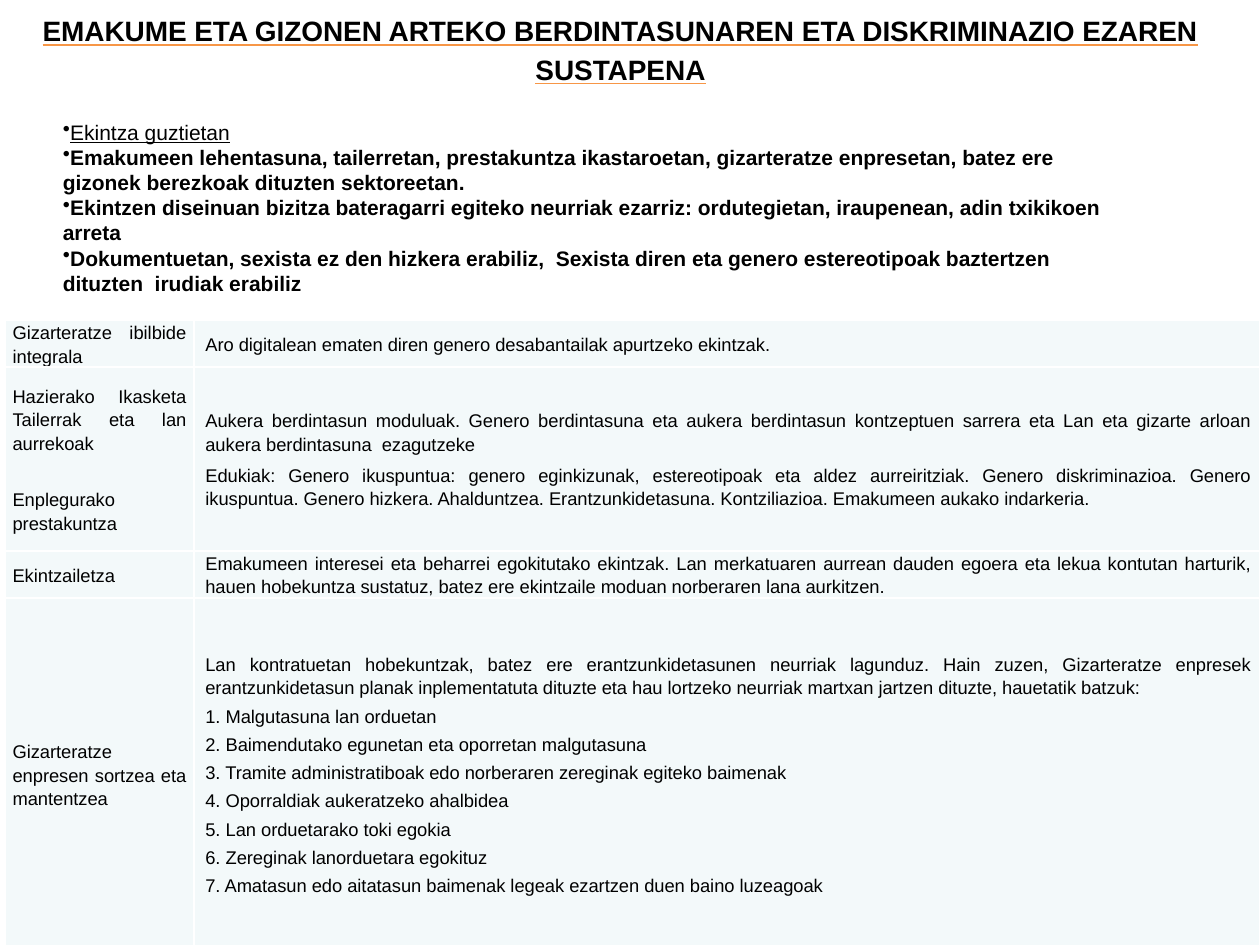
"""Build a slide on promoting equality between women and men."""
import pptx
import pptx.util
import pptx.dml.color
import pptx.enum.shapes
import pptx.enum.text
import pptx.oxml
import pptx.oxml.ns
from dataclasses import dataclass

Inches, Pt = pptx.util.Inches, pptx.util.Pt
RGB = pptx.dml.color.RGBColor.from_string
ALIGN = pptx.enum.text.PP_ALIGN
ANCHOR = pptx.enum.text.MSO_ANCHOR
AUTO = pptx.enum.text.MSO_AUTO_SIZE


@dataclass(frozen=True)
class Theme:
    font: str = "Arial"
    ink: str = "000000"
    paper: str = "FFFFFF"
    cell: str = "F3F9FA"
    accent: str = "F79646"
    title: float = 16
    body: float = 12
    table: float = 10.5
    spacing: float = 1.15


THEME = Theme()

TITLE = "EMAKUME ETA GIZONEN ARTEKO BERDINTASUNAREN ETA DISKRIMINAZIO EZAREN SUSTAPENA"
LEAD = "Ekintza guztietan"
MEASURES = [
    "Emakumeen lehentasuna, tailerretan, prestakuntza ikastaroetan, gizarteratze enpresetan, "
    "batez ere gizonek berezkoak dituzten sektoreetan.",
    "Ekintzen diseinuan bizitza bateragarri egiteko neurriak ezarriz: ordutegietan, iraupenean, "
    "adin txikikoen arreta",
    "Dokumentuetan, sexista ez den hizkera erabiliz,  Sexista diren eta genero estereotipoak "
    "baztertzen dituzten  irudiak erabiliz",
]

LABEL = dict(align=ALIGN.JUSTIFY, after=3)
ROWS = [
    dict(height=0.37,
         labels=["Gizarteratze ibilbide integrala"],
         details=["Aro digitalean ematen diren genero desabantailak apurtzeko ekintzak."],
         style=dict(indent=0.03)),
    dict(height=1.46,
         labels=["Hazierako Ikasketa Tailerrak eta lan aurrekoak", "Enplegurako prestakuntza"],
         details=[
             "Aukera berdintasun moduluak. Genero berdintasuna eta aukera berdintasun kontzeptuen "
             "sarrera eta Lan eta gizarte arloan aukera berdintasuna  ezagutzeke",
             "Edukiak: Genero ikuspuntua: genero eginkizunak, estereotipoak eta aldez aurreiritziak. "
             "Genero diskriminazioa. Genero ikuspuntua. Genero hizkera. Ahalduntzea. "
             "Erantzunkidetasuna. Kontziliazioa. Emakumeen aukako indarkeria."],
         style=dict(align=ALIGN.JUSTIFY, indent=0.03, before=1.4, after=2.9)),
    dict(height=0.37,
         labels=["Ekintzailetza"],
         details=[
             "Emakumeen interesei eta beharrei egokitutako ekintzak. Lan merkatuaren aurrean dauden "
             "egoera eta lekua kontutan harturik, hauen hobekuntza sustatuz, batez ere ekintzaile "
             "moduan norberaren lana aurkitzen."],
         style=dict(align=ALIGN.JUSTIFY, indent=0.03, after=3)),
    dict(height=2.8,
         labels=["Gizarteratze enpresen sortzea eta mantentzea"],
         details=[
             "Lan kontratuetan hobekuntzak, batez ere erantzunkidetasunen neurriak lagunduz. Hain "
             "zuzen, Gizarteratze enpresek erantzunkidetasun planak inplementatuta dituzte eta hau "
             "lortzeko neurriak martxan jartzen dituzte, hauetatik batzuk:",
             "1. Malgutasuna lan orduetan",
             "2. Baimendutako egunetan eta oporretan malgutasuna",
             "3. Tramite administratiboak edo norberaren zereginak egiteko baimenak",
             "4. Oporraldiak aukeratzeko ahalbidea",
             "5. Lan orduetarako toki egokia",
             "6. Zereginak lanorduetara egokituz",
             "7. Amatasun edo aitatasun baimenak legeak ezartzen duen baino luzeagoak"],
         style=dict(align=ALIGN.JUSTIFY, indent=0.03, before=1.4, after=1.4)),
]
COLUMNS = [1.5, 8.46]
LABEL_GAP = 16


def xml(body):
    return pptx.oxml.parse_xml(body.replace(">", f" {pptx.oxml.ns.nsdecls('a')}>", 1))


def add_text(tf, text, *, size, bold=False, underline=False, underline_color=None, bullet=None,
             align=ALIGN.LEFT, indent=0, before=0, after=0, spacing=1.0):
    first = not tf.paragraphs[0].runs
    p = tf.paragraphs[0] if first else tf.add_paragraph()
    pr = p._p.get_or_add_pPr()
    pr.set("marL", str(Inches(indent)))
    pr.set("indent", "0")
    if bullet:
        pr.append(xml(f'<a:buChar char="{bullet}"></a:buChar>'))
    p.alignment, p.line_spacing = align, spacing
    p.space_before, p.space_after = Pt(0 if first else before), Pt(after)
    r = p.add_run()
    r.text = text
    r.font.name, r.font.size = THEME.font, Pt(size)
    r.font.bold, r.font.underline = bold, underline
    r.font.color.rgb = RGB(THEME.ink)
    if underline_color:
        fill = r._r.rPr.find(pptx.oxml.ns.qn("a:solidFill"))
        fill.addnext(xml(f'<a:uFill><a:solidFill><a:srgbClr val="{underline_color}"/>'
                         '</a:solidFill></a:uFill>'))


def style_cell(cell):
    cell.margin_left = cell.margin_right = Inches(0.06)
    cell.margin_top = cell.margin_bottom = 0
    cell.vertical_anchor = ANCHOR.MIDDLE
    cell.fill.solid()
    cell.fill.fore_color.rgb = RGB(THEME.cell)
    for i, side in enumerate(("lnL", "lnR", "lnT", "lnB")):
        cell._tc.tcPr.insert(i, xml(f'<a:{side} w="{Pt(1)}"><a:solidFill><a:srgbClr '
                                    f'val="{THEME.paper}"/></a:solidFill></a:{side}>'))


def add_table(s):
    height = sum(row["height"] for row in ROWS)
    table = s.shapes.add_table(len(ROWS), len(COLUMNS), Inches(0.04), Inches(2.54),
                               Inches(sum(COLUMNS)), Inches(height)).table
    table.first_row = table.horz_banding = False
    for column, width in zip(table.columns, COLUMNS):
        column.width = Inches(width)
    for i, row in enumerate(ROWS):
        table.rows[i].height = Inches(row["height"])
        parts = [(row["labels"], dict(LABEL, before=LABEL_GAP)), (row["details"], row["style"])]
        for j, (texts, style) in enumerate(parts):
            cell = table.cell(i, j)
            style_cell(cell)
            for text in texts:
                add_text(cell.text_frame, text, size=THEME.table, spacing=THEME.spacing, **style)


def add_title(s):
    tf = s.shapes.add_textbox(Inches(0.12), Inches(0.02), Inches(9.61), Inches(0.69)).text_frame
    tf.word_wrap, tf.auto_size = True, AUTO.SHAPE_TO_FIT_TEXT
    add_text(tf, TITLE, size=THEME.title, bold=True, underline=True,
             underline_color=THEME.accent, align=ALIGN.CENTER, spacing=THEME.spacing)


def add_measures(s):
    sp = s.shapes.add_shape(pptx.enum.shapes.MSO_SHAPE.RECTANGLE, Inches(0.4), Inches(0.89),
                            Inches(8.5), Inches(1.51))
    sp.shadow.inherit = False
    sp.fill.solid()
    sp.fill.fore_color.rgb = RGB(THEME.paper)
    sp.line.fill.background()
    tf = sp.text_frame
    tf.word_wrap, tf.auto_size = True, AUTO.SHAPE_TO_FIT_TEXT
    tf.vertical_anchor = ANCHOR.MIDDLE
    add_text(tf, LEAD, size=THEME.body, underline=True, bullet="•")
    for text in MEASURES:
        add_text(tf, text, size=THEME.body, bold=True, bullet="•")


def main():
    prs = pptx.Presentation()
    prs.slide_width, prs.slide_height = Inches(10), Inches(7.5)
    s = prs.slides.add_slide(prs.slide_layouts[6])
    add_table(s)
    add_title(s)
    add_measures(s)
    prs.save("out.pptx")


if __name__ == "__main__":
    main()
